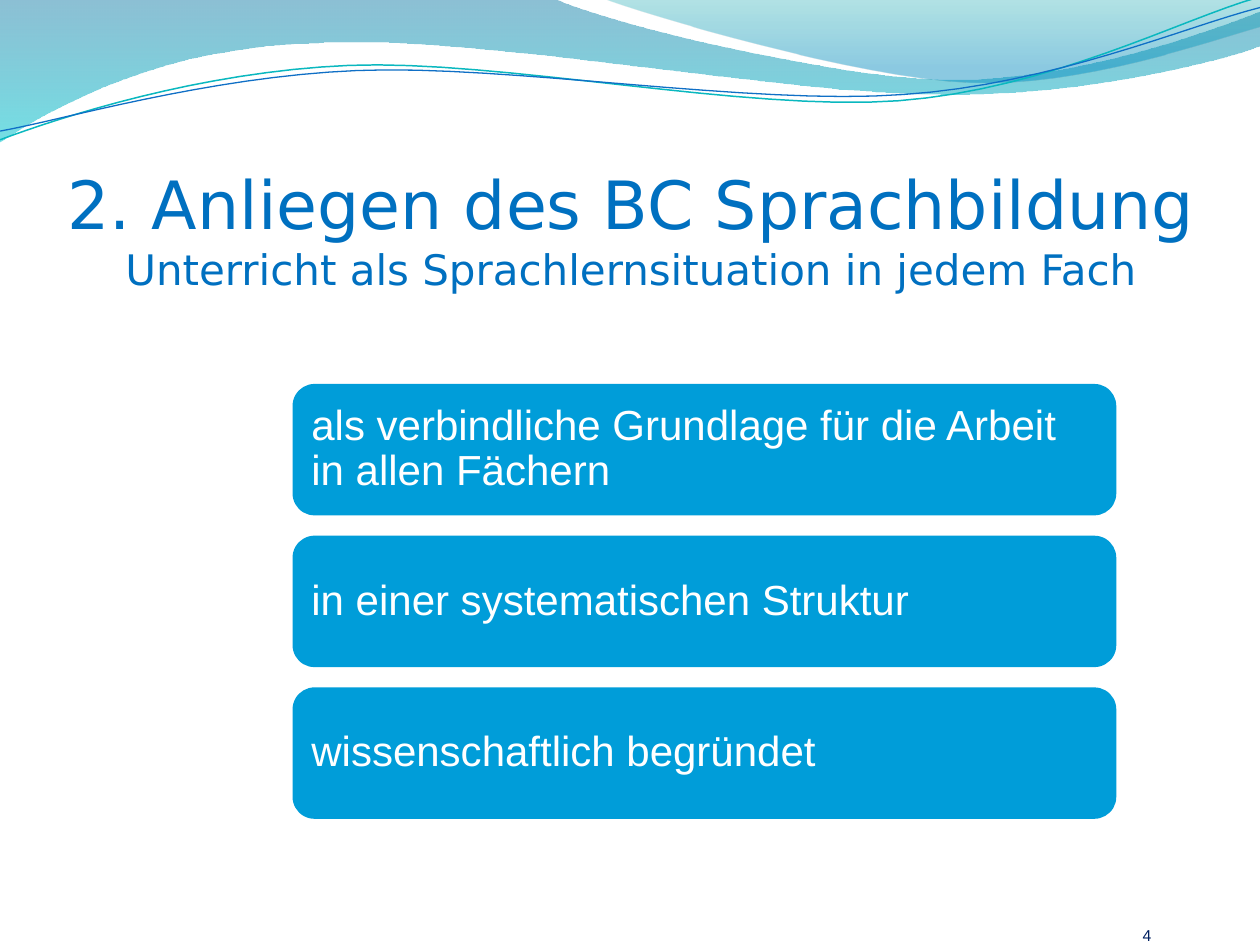
from pptx import Presentation
from pptx.dml.color import RGBColor
from pptx.enum.shapes import MSO_SHAPE as Shape
from pptx.enum.text import MSO_ANCHOR as Anchor, MSO_AUTO_SIZE as AutoSize, PP_ALIGN as Align
from pptx.oxml.ns import qn
from pptx.util import Pt
from lxml.etree import SubElement

HEADING_BLUE = RGBColor(0x00, 0x70, 0xC0)
NUMBER_NAVY = RGBColor(0x00, 0x20, 0x60)
BOX_BLUE = RGBColor(0x00, 0x9D, 0xD9)
WHITE = RGBColor(0xFF, 0xFF, 0xFF)
DEEP_BLUE = RGBColor(0x00, 0x74, 0xA1)
TURQUOISE = RGBColor(0x00, 0xC6, 0xCF)
TEAL = RGBColor(0x00, 0xA1, 0xA9)
SEA_BLUE = RGBColor(0x00, 0x8B, 0xBF)
TEAL_LINE = RGBColor(0x0A, 0xB8, 0xBF)
BLUE_LINE = RGBColor(0x0F, 0x6F, 0xC6)

CURVE_STEPS = 16
GOALS = [
    "als verbindliche Grundlage für die Arbeit in allen Fächern",
    "in einer systematischen Struktur",
    "wissenschaftlich begründet",
]
LEFT_WAVE = [
    (0, 0),
    (316.8, -0.7),
    (342.7, 12.2, 478.1, 45.4, 545.8, 45.4),
    (614.2, 45.4, 689.8, 18.7, 720, 6.5),
    (720.7, 25.9),
    (707.8, 31.7, 626.4, 54.7, 537.1, 54),
    (447.8, 54, 275, 20.2, 185, 24.5),
    (92.9, 25.9, 33.1, 59.8, -0.7, 81.4),
]
RIGHT_WAVE = [
    (344.9, -0.7),
    (366.5, 7.9, 491, 44.6, 553.7, 46.8),
    (616.3, 49.7, 691.9, 23, 720, 15.1),
    (720, 0),
]
TEAL_CURVE = [
    (0, 79.9),
    (34.6, 67, 113.8, 41, 199.4, 37.4),
    (284.4, 33.8, 427, 64.1, 513.4, 57.6),
    (599.8, 51.1, 675.4, 10.8, 718.6, -1.4),
]
BLUE_CURVE = [
    (0, 74.9),
    (33.8, 69.1, 118.1, 43.9, 203.8, 40.3),
    (290.2, 36.7, 429.8, 60.5, 516.2, 54),
    (601.9, 48.2, 677.5, 15.1, 720, 4.3),
]


def bezier_points(start, segment):
    """Return points along a cubic curve from start."""
    controls = [start, segment[0:2], segment[2:4], segment[4:6]]
    points = []
    for step in range(1, CURVE_STEPS + 1):
        t = step / CURVE_STEPS
        weights = [(1 - t) ** 3, 3 * t * (1 - t) ** 2, 3 * t * t * (1 - t), t ** 3]
        points.append(tuple(
            sum(weight * control[axis] for weight, control in zip(weights, controls))
            for axis in (0, 1)))
    return points


def add_outline(page, segments, close):
    """Draw an outline whose segments are line ends or cubic curves."""
    points = [segments[0]]
    for segment in segments[1:]:
        points += [segment] if len(segment) == 2 else bezier_points(points[-1], segment)
    points = [(Pt(x), Pt(y)) for x, y in points]
    builder = page.shapes.build_freeform(*points[0])
    builder.add_line_segments(points[1:], close=close)
    outline = builder.convert_to_shape()
    outline.shadow.inherit = False
    return outline


def add_wave(page, segments, stops):
    """Draw a wave filled with a translucent vertical gradient."""
    wave = add_outline(page, segments, close=True)
    wave.line.fill.background()
    wave.fill.gradient()
    wave.fill.gradient_angle = 270
    for stop, (position, color, opacity) in zip(wave.fill.gradient_stops, stops):
        stop.position = position
        stop.color.rgb = color
    colors = wave._element.spPr.iter(qn("a:srgbClr"))
    for color_element, (_, _, opacity) in zip(list(colors), stops):
        SubElement(color_element, qn("a:alpha")).set("val", str(opacity * 1000))


def add_curve(page, segments, color, width):
    """Draw an open curved line."""
    curve = add_outline(page, segments, close=False)
    curve.fill.background()
    curve.line.color.rgb = color
    curve.line.width = Pt(width)


def place(shape, left, top, width, height):
    """Move and size a shape in points."""
    shape.left, shape.top = Pt(left), Pt(top)
    shape.width, shape.height = Pt(width), Pt(height)


def format_frame(frame, anchor, left=0, top=0, right=0, bottom=0):
    """Set anchor, insets and wrapping of a text frame."""
    frame.word_wrap = True
    frame.auto_size = AutoSize.NONE
    frame.vertical_anchor = anchor
    frame.margin_left, frame.margin_top = Pt(left), Pt(top)
    frame.margin_right, frame.margin_bottom = Pt(right), Pt(bottom)


def set_font(font, name, size, color):
    """Set typeface, size and colour."""
    font.name, font.size = name, Pt(size)
    font.color.rgb = color


def fill_title(title):
    """Write the heading and its smaller second line."""
    place(title, 25.2, 65.5, 671, 102.2)
    format_frame(title.text_frame, Anchor.BOTTOM, top=3.6)
    para = title.text_frame.paragraphs[0]
    para.alignment = Align.CENTER
    for text, size in [("2. Anliegen des BC Sprachbildung ", 38),
                       ("Unterricht als Sprachlernsituation in jedem Fach", 24)]:
        span = para.add_run()
        span.text = text
        set_font(span.font, "DejaVu Sans", size, HEADING_BLUE)


def add_goal(page, text, top):
    """Add a rounded box holding one goal."""
    box = page.shapes.add_shape(
        Shape.ROUNDED_RECTANGLE, Pt(167.2), Pt(top), Pt(470.7), Pt(75.1))
    box.shadow.inherit = False
    box.fill.solid()
    box.fill.fore_color.rgb = BOX_BLUE
    box.line.fill.background()
    format_frame(box.text_frame, Anchor.MIDDLE, 7.2, 7.2, 7.2, 7.2)
    para = box.text_frame.paragraphs[0]
    para.text = text
    para.alignment = Align.LEFT
    para.line_spacing = 0.9
    set_font(para.font, "Arial", 24, WHITE)


def add_page_number(page, number):
    """Add the page number at the lower right."""
    box = page.shapes.add_textbox(Pt(653), Pt(517.7), Pt(47.5), Pt(22.3))
    format_frame(box.text_frame, Anchor.BOTTOM)
    para = box.text_frame.paragraphs[0]
    para.text = number
    set_font(para.font, "Arial", 9, NUMBER_NAVY)


def main():
    """Build the slide and save it."""
    deck = Presentation()
    deck.slide_width, deck.slide_height = Pt(720), Pt(540)
    page = deck.slides.add_slide(deck.slide_layouts[5])
    add_wave(page, LEFT_WAVE, [(0, DEEP_BLUE, 45), (1, TURQUOISE, 55)])
    add_wave(page, RIGHT_WAVE, [(0, TEAL, 30), (0.8, SEA_BLUE, 45)])
    add_curve(page, TEAL_CURVE, TEAL_LINE, 0.85)
    add_curve(page, BLUE_CURVE, BLUE_LINE, 0.75)
    fill_title(page.shapes.title)
    add_page_number(page, "4")
    for index, goal in enumerate(GOALS):
        add_goal(page, goal, 219.4 + 86.7 * index)
    deck.save("out.pptx")


if __name__ == "__main__":
    main()
